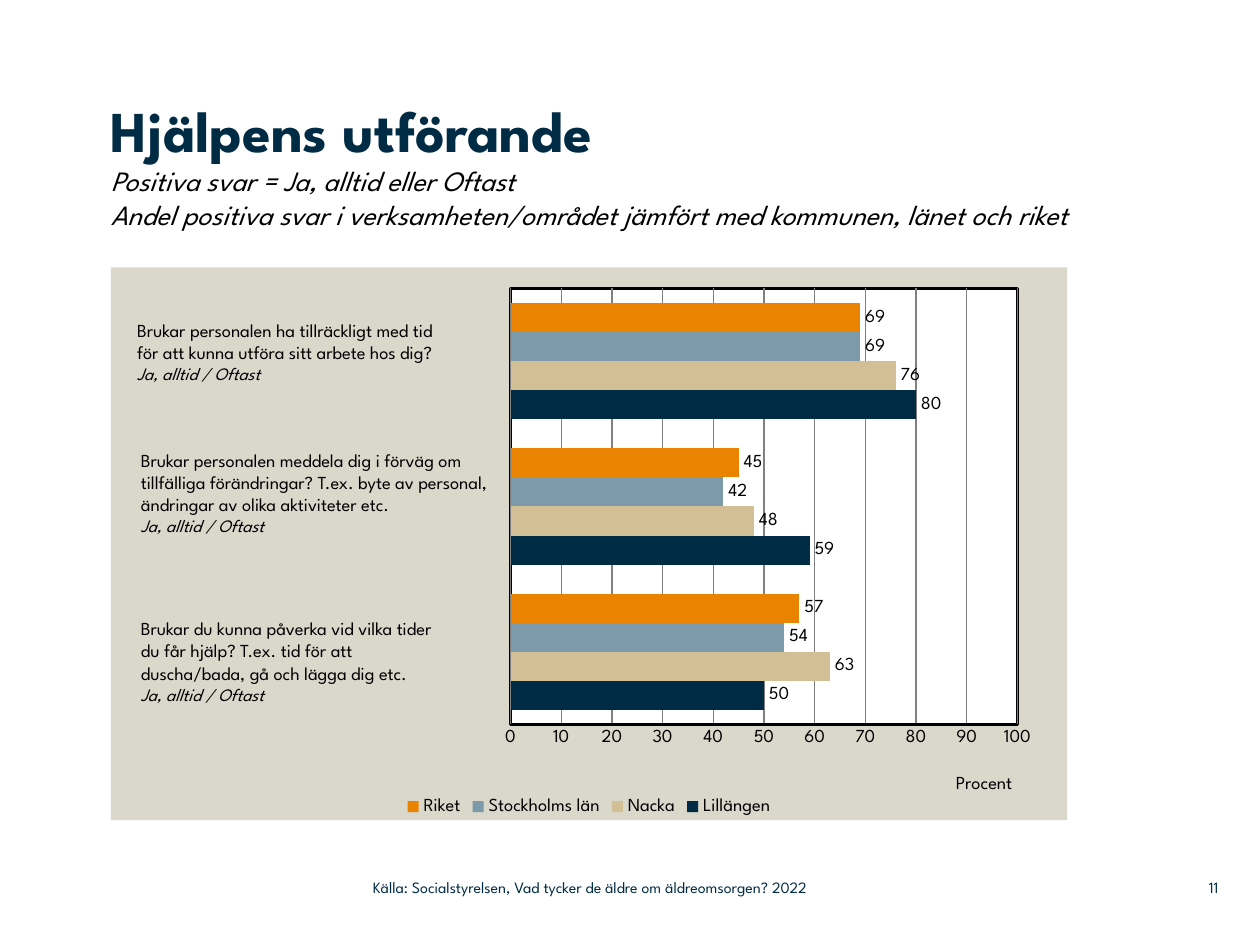
import dataclasses

import pptx
import pptx.chart.data
import pptx.dml.color
import pptx.enum.chart
import pptx.enum.text
import pptx.oxml
import pptx.oxml.ns
import pptx.util

WIDTH, HEIGHT = 10, 7.5
ANSWER = "Ja, alltid / Oftast"


@dataclasses.dataclass(frozen=True)
class Theme:
    """Colours, font and type sizes of the slide."""

    font: str = "League Spartan"
    navy: str = "002B45"
    black: str = "000000"
    white: str = "FFFFFF"
    panel: str = "DAD7CB"
    grid: str = "808080"
    sand: str = "D3BF96"
    steel: str = "7D9AAA"
    orange: str = "E98300"
    heading: float = 33
    subheading: float = 16
    body: float = 10.5
    answer: float = 10
    footer: float = 9


THEME = Theme()


def rgb(colour):
    """Turn a hex string into a colour."""
    return pptx.dml.color.RGBColor.from_string(colour)


def apply(target, values):
    """Set every attribute named in a dict of format values."""
    for name, value in values.items():
        setattr(target, name, value)


def style_font(font, size, colour=THEME.black, **extra):
    """Give a font the theme's typeface with a size and colour."""
    apply(font, {"name": THEME.font, "size": pptx.util.Pt(size), "bold": False, **extra})
    font.color.rgb = rgb(colour)


def add_text(slide, box, paragraphs, inset=True, align=None, middle=False):
    """Add a text box from (text, size, colour, extras) paragraphs."""
    left, top, width, height = box
    frame = slide.shapes.add_textbox(
        *(pptx.util.Inches(share * side)
          for share, side in zip((left, top, width, height), (WIDTH, HEIGHT) * 2))
    ).text_frame
    anchors = pptx.enum.text.MSO_ANCHOR
    apply(frame, {"word_wrap": True,
                  "vertical_anchor": anchors.MIDDLE if middle else anchors.TOP})
    if not inset:
        apply(frame, dict.fromkeys(
            ("margin_left", "margin_top", "margin_right", "margin_bottom"), 0))
    for index, (text, size, colour, extra) in enumerate(paragraphs):
        paragraph = frame.add_paragraph() if index else frame.paragraphs[0]
        if align is not None:
            paragraph.alignment = align
        run = paragraph.add_run()
        run.text = text
        style_font(run.font, size, colour, **extra)


def add_question(slide, box, lines):
    """Add a question with its positive answers in italics."""
    question = [(line, THEME.body, THEME.black, {}) for line in lines]
    add_text(slide, box, question + [(ANSWER, THEME.answer, THEME.black, {"italic": True})])


def set_layout(parent, position, target="", **shares):
    """Place a chart part by shares of the chart's size."""
    for old in parent.xpath("c:layout"):
        parent.remove(old)
    inner = f'<c:layoutTarget val="{target}"/>' if target else ""
    modes = "".join(f'<c:{axis}Mode val="edge"/>' for axis in "xy")
    values = "".join(f'<c:{name} val="{share}"/>' for name, share in shares.items())
    parent.insert(position, pptx.oxml.parse_xml(
        f'<c:layout {pptx.oxml.ns.nsdecls("c")}><c:manualLayout>'
        f"{inner}{modes}{values}</c:manualLayout></c:layout>"))


def area_format(fill, line=""):
    """Make the fill and outline element of a chart area."""
    solid = '<a:solidFill><a:srgbClr val="{}"/></a:solidFill>'
    outline = solid.format(line) if line else "<a:noFill/>"
    return pptx.oxml.parse_xml(
        f'<c:spPr {pptx.oxml.ns.nsdecls("c", "a")}>{solid.format(fill)}'
        f'<a:ln w="{pptx.util.Pt(2)}">{outline}</a:ln></c:spPr>')


def style_axes(chart):
    """Hide the category axis and set the percent axis."""
    chart.category_axis.visible = False
    axis = chart.value_axis
    ticks = pptx.enum.chart.XL_TICK_MARK
    apply(axis, {"minimum_scale": 0, "maximum_scale": 100, "major_unit": 10,
                 "major_tick_mark": ticks.NONE, "minor_tick_mark": ticks.NONE,
                 "has_major_gridlines": True})
    style_font(axis.tick_labels.font, THEME.body)
    for line, colour, width in ((axis.format.line, THEME.black, 2),
                                (axis.major_gridlines.format.line, THEME.grid, 0.75)):
        line.color.rgb = rgb(colour)
        line.width = pptx.util.Pt(width)
    unit = axis.axis_title.text_frame.paragraphs[0].add_run()
    unit.text = "Procent"
    style_font(unit.font, THEME.body)
    set_layout(axis.axis_title.element, 1, x=0.88, y=0.91)


def add_comparison_chart(slide, box, results):
    """Add the clustered bars comparing unit, municipality, county and country."""
    data = pptx.chart.data.CategoryChartData()
    data.categories = ["1", "2", "3"]
    for name, values, _ in results:
        data.add_series(name, values)
    left, top, width, height = box
    chart = slide.shapes.add_chart(
        pptx.enum.chart.XL_CHART_TYPE.BAR_CLUSTERED,
        pptx.util.Inches(left * WIDTH), pptx.util.Inches(top * HEIGHT),
        pptx.util.Inches(width * WIDTH), pptx.util.Inches(height * HEIGHT), data).chart
    apply(chart, {"has_title": False, "has_legend": True})
    style_font(chart.font, THEME.body)
    apply(chart.legend, {"position": pptx.enum.chart.XL_LEGEND_POSITION.BOTTOM,
                         "include_in_layout": False})
    style_font(chart.legend.font, THEME.body)
    bars = chart.plots[0]
    apply(bars, {"gap_width": 100, "overlap": 0, "vary_by_categories": False})
    for series, (_, _, colour) in zip(bars.series, results):
        series.format.fill.solid()
        series.format.fill.fore_color.rgb = rgb(colour)
        labels = series.data_labels
        apply(labels, {"show_value": True,
                       "position": pptx.enum.chart.XL_LABEL_POSITION.OUTSIDE_END})
        style_font(labels.font, THEME.body)
    style_axes(chart)
    plot_area = chart.element.xpath("c:chart/c:plotArea")[0]
    set_layout(plot_area, 0, "inner", x=0.418, y=0.038, w=0.53, h=0.789)
    plot_area.append(area_format(THEME.white, THEME.black))
    chart.element.xpath("c:chart")[0].addnext(area_format(THEME.panel))


def main():
    """Build the slide and save it."""
    deck = pptx.Presentation()
    apply(deck, {"slide_width": pptx.util.Inches(WIDTH),
                 "slide_height": pptx.util.Inches(HEIGHT)})
    slide = deck.slides.add_slide(deck.slide_layouts[6])
    subheadings = ("Positiva svar = Ja, alltid eller Oftast",
                   "Andel positiva svar i verksamheten/området jämfört med "
                   "kommunen, länet och riket")
    add_text(slide, (0.088, 0.1, 0.779, 0.16),
             [("Hjälpens utförande", THEME.heading, THEME.navy, {"bold": True})]
             + [(line, THEME.subheading, THEME.black, {"italic": True})
                for line in subheadings], inset=False)
    add_comparison_chart(slide, (0.088, 0.283, 0.759, 0.585), [
        ("Lillängen", (50, 59, 80), THEME.navy),
        ("Nacka", (63, 48, 76), THEME.sand),
        ("Stockholms län", (54, 42, 69), THEME.steel),
        ("Riket", (57, 45, 69), THEME.orange),
    ])
    add_question(slide, (0.099, 0.331, 0.297, 0.108), (
        "Brukar personalen ha tillräckligt med tid",
        "för att kunna utföra sitt arbete hos dig?"))
    add_question(slide, (0.102, 0.469, 0.299, 0.131), (
        "Brukar personalen meddela dig i förväg om tillfälliga förändringar? "
        "T.ex. byte av personal, ändringar av olika aktiviteter etc.",))
    add_question(slide, (0.102, 0.647, 0.297, 0.108), (
        "Brukar du kunna påverka vid vilka tider",
        "du får hjälp? T.ex. tid för att",
        "duscha/bada, gå och lägga dig etc."))
    alignment = pptx.enum.text.PP_ALIGN
    for left, width, text, align in (
            (0.296, 0.443, "Källa: Socialstyrelsen, Vad tycker de äldre om "
             "äldreomsorgen? 2022", alignment.LEFT),
            (0.92, 0.047, "11", alignment.RIGHT)):
        add_text(slide, (left, 0.919, width, 0.039),
                 [(text, THEME.footer, THEME.navy, {})], False, align, True)
    deck.save("out.pptx")


if __name__ == "__main__":
    main()
